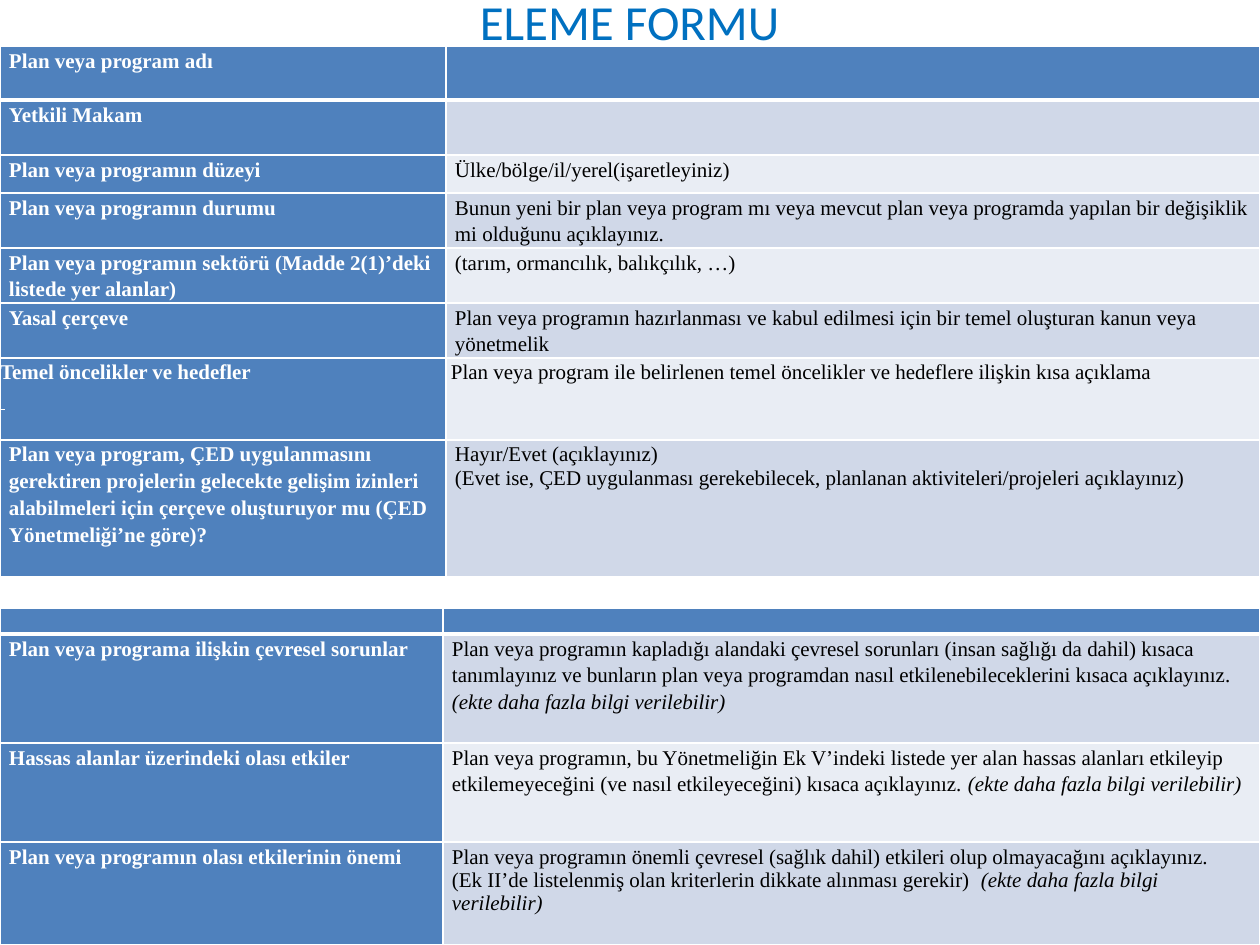
from lxml.etree import SubElement
from pptx import Presentation
from pptx.dml.color import RGBColor
from pptx.enum.text import MSO_ANCHOR, PP_ALIGN
from pptx.oxml.ns import qn
from pptx.util import Emu, Pt

WHITE = RGBColor(0xFF, 0xFF, 0xFF)
BLACK = RGBColor(0, 0, 0)
TITLE_BLUE = RGBColor(0x00, 0x70, 0xC0)
LABEL_BLUE = RGBColor(0x4F, 0x81, 0xBD)
BANDS = (RGBColor(0xE9, 0xED, 0xF4), RGBColor(0xD0, 0xD8, 0xE8))
PX_PER_INCH = 126
CELL_INSET = 9
NOTE = "(ekte daha fazla bilgi verilebilir)"
UNDERLINED_GAP = "\N{NO-BREAK SPACE}"

# Each row: height, label, answer paragraphs, (label inset, answer inset)
INSETS = (CELL_INSET, CELL_INSET)
PLAN_ROWS = [
    (54, "Plan veya program adı", [], INSETS),
    (55, "Yetkili Makam", [], INSETS),
    (38, "Plan veya programın düzeyi", ["Ülke/bölge/il/yerel(işaretleyiniz)"], INSETS),
    (55, "Plan veya programın durumu",
     ["Bunun yeni bir plan veya program mı veya mevcut plan veya programda "
      "yapılan bir değişiklik mi olduğunu açıklayınız."], INSETS),
    (55, "Plan veya programın sektörü (Madde 2(1)’deki listede yer alanlar)",
     ["(tarım, ormancılık, balıkçılık, …)"], INSETS),
    (55, "Yasal çerçeve",
     ["Plan veya programın hazırlanması ve kabul edilmesi için bir temel "
      "oluşturan kanun veya yönetmelik"], INSETS),
    (82, "Temel öncelikler ve hedefler",
     ["Plan veya program ile belirlenen temel öncelikler ve hedeflere ilişkin "
      "kısa açıklama"], (0, 5)),
    (137, "Plan veya program, ÇED uygulanmasını gerektiren projelerin gelecekte "
     "gelişim izinleri alabilmeleri için çerçeve oluşturuyor mu (ÇED "
     "Yönetmeliği’ne göre)?",
     ["Hayır/Evet (açıklayınız)",
      "(Evet ise, ÇED uygulanması gerekebilecek, planlanan "
      "aktiviteleri/projeleri açıklayınız)"], INSETS),
]
IMPACT_ROWS = [
    (26, "", [], INSETS),
    (109, "Plan veya programa ilişkin çevresel sorunlar",
     ["Plan veya programın kapladığı alandaki çevresel sorunları (insan sağlığı "
      "da dahil) kısaca tanımlayınız ve bunların plan veya programdan nasıl "
      "etkilenebileceklerini kısaca açıklayınız. " + NOTE], INSETS),
    (99, "Hassas alanlar üzerindeki olası etkiler",
     ["Plan veya programın, bu Yönetmeliğin Ek V’indeki listede yer alan hassas "
      "alanları etkileyip etkilemeyeceğini (ve nasıl etkileyeceğini) kısaca "
      "açıklayınız. " + NOTE], INSETS),
    (103, "Plan veya programın olası etkilerinin önemi",
     ["Plan veya programın önemli çevresel (sağlık dahil) etkileri olup "
      "olmayacağını açıklayınız.",
      "(Ek II’de listelenmiş olan kriterlerin dikkate alınması gerekir)  " + NOTE],
     INSETS),
]


def px(length):
    return Emu(round(length * 914400 / PX_PER_INCH))


def style_cell(cell, fill, inset, top_width, bottom_width):
    """White borders first, then the fill, as the schema orders them."""
    properties = cell._tc.get_or_add_tcPr()
    for side, width in zip("LRTB", (1, 1, top_width, bottom_width)):
        border = SubElement(properties, qn(f"a:ln{side}"), w=str(Pt(width)))
        solid = SubElement(border, qn("a:solidFill"))
        SubElement(solid, qn("a:srgbClr"), val=str(WHITE))
    cell.fill.solid()
    cell.fill.fore_color.rgb = fill
    cell.margin_left, cell.margin_right = px(inset), px(min(inset, CELL_INSET))
    cell.margin_top = cell.margin_bottom = 0


def write_cell(cell, lines, color, bold):
    frame = cell.text_frame
    for index, line in enumerate(lines or [""]):
        paragraph = frame.add_paragraph() if index else frame.paragraphs[0]
        # Only the opening paragraph of an answer has the wider spacing
        if index == 0 or bold:
            paragraph.line_spacing = 1.15
        font = paragraph.font
        font.name, font.size, font.bold = "Times New Roman", Pt(12), bold
        font.color.rgb = color
        body, note, _ = line.partition(NOTE)
        for text in filter(None, (body, note)):
            run = paragraph.add_run()
            run.text = text
            if text == NOTE:
                run.font.italic = True
            if text == UNDERLINED_GAP:
                run.font.underline = True


def add_form(slide, left, top, widths, rows):
    height = sum(row[0] for row in rows)
    table = slide.shapes.add_table(len(rows), len(widths), px(left), px(top),
                                   px(sum(widths)), px(height)).table
    for column, width in zip(table.columns, widths):
        column.width = px(width)
    for index, (row_height, label, answer, insets) in enumerate(rows):
        table.rows[index].height = px(row_height)
        fills = (LABEL_BLUE, BANDS[index % 2] if index else LABEL_BLUE)
        # A thick rule divides the header row from the body
        top_width = 3 if index == 1 else 1
        bottom_width = 3 if index == 0 else 1
        label_lines = [label] if insets[0] else [label, UNDERLINED_GAP]
        contents = ((label_lines, WHITE, True), (answer, BLACK, False))
        for column, (lines, color, bold) in enumerate(contents):
            cell = table.cell(index, column)
            style_cell(cell, fills[column], insets[column], top_width, bottom_width)
            write_cell(cell, lines, color, bold)


def add_title(slide, left, top, width, height):
    frame = slide.shapes.add_textbox(px(left), px(top), px(width), px(height)).text_frame
    frame.word_wrap = True
    frame.vertical_anchor = MSO_ANCHOR.MIDDLE
    heading = frame.paragraphs[0]
    heading.text = "ELEME FORMU"
    heading.alignment = PP_ALIGN.CENTER
    heading.font.name, heading.font.size = "Calibri", Pt(28)
    heading.font.color.rgb = TITLE_BLUE


def main():
    deck = Presentation()
    deck.slide_width, deck.slide_height = px(1260), px(945)
    slide = deck.slides.add_slide(deck.slide_layouts[6])
    add_form(slide, 0, 46, (446, 814), PLAN_ROWS)
    add_form(slide, 0, 608, (443, 817), IMPACT_ROWS)
    add_title(slide, 53, -43, 1153, 127)
    deck.save("out.pptx")


if __name__ == "__main__":
    main()
